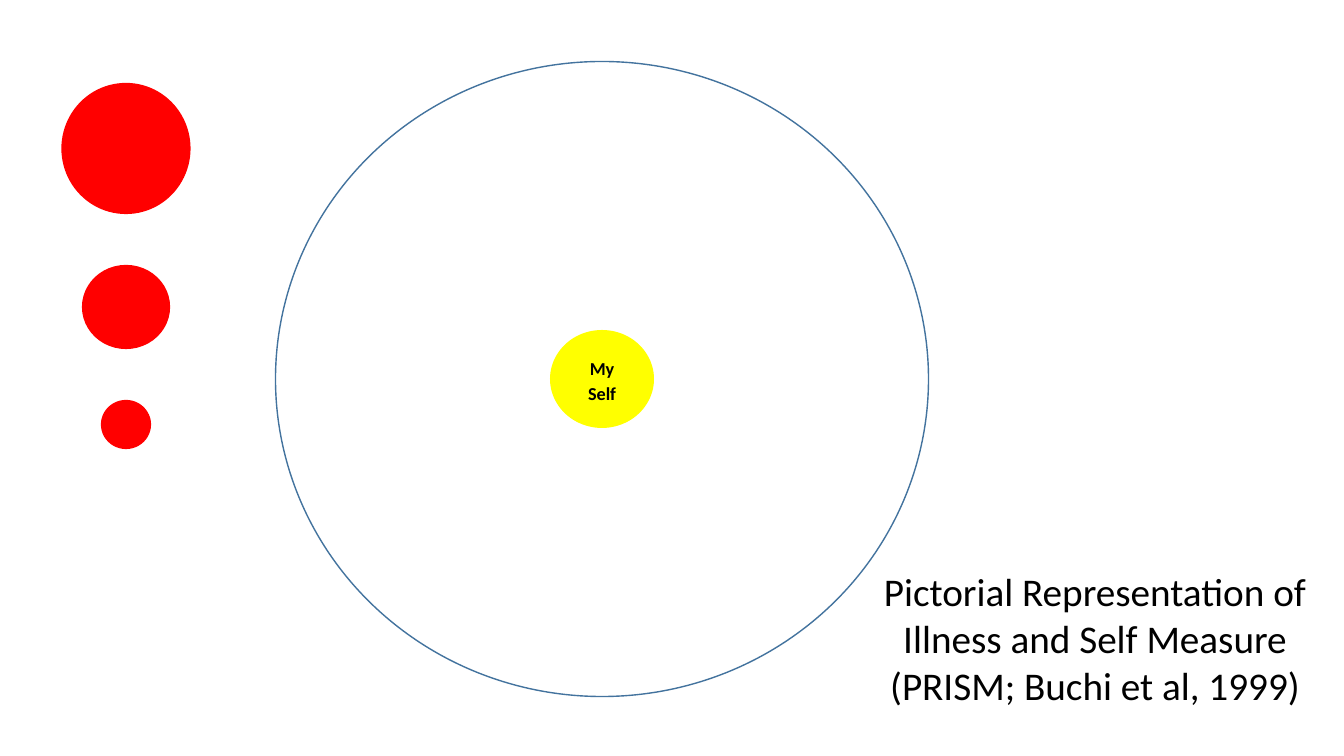
"""Build the PRISM slide: a life circle with the self at its centre, illness discs and a caption."""
from dataclasses import dataclass

from pptx import Presentation
from pptx.dml.color import RGBColor
from pptx.enum.shapes import MSO_SHAPE as Preset
from pptx.enum.text import MSO_ANCHOR as Anchor, MSO_AUTO_SIZE as AutoSize, PP_ALIGN as Align
from pptx.util import Pt

CAPTION = "Pictorial Representation of Illness and Self Measure (PRISM; Buchi et al, 1999)"
CAPTION_BOX = (869, 562, 452, 194)
SELF_LABEL = "My Self"
LIFE_CENTRE = (602, 379)
LIFE_SIZE = (653, 635)
SELF_SIZE = (104, 98)
ILLNESS_SIZES = [(125, 127), (84, 80), (46, 45)]
ILLNESS_CENTRE_X, ILLNESS_TOP, ILLNESS_GAP = 126, 85, 55
SLIDE_SIZE = (1344, 756)
EMU_PER_PX = 914400 / 100.8


@dataclass(frozen=True)
class Theme:
    """Colours, font and point sizes of the slide."""
    text: str = "000000"
    life: str = "43739E"
    illness: str = "FF0000"
    self_disc: str = "FFFF00"
    font: str = "Calibri"
    caption_size: int = 28
    label_size: int = 13
    life_line: int = 1
    illness_line: int = 3


THEME = Theme()


def px(*lengths):
    """Turn pixel lengths into EMU."""
    return [round(length * EMU_PER_PX) for length in lengths]


def add_disc(slide, centre, size, fill=None, line=None, line_width=0):
    """Add an ellipse around a centre point."""
    (x, y), (width, height) = centre, size
    disc = slide.shapes.add_shape(
        Preset.OVAL, *px(x - width / 2, y - height / 2, width, height))
    disc.shadow.inherit = False
    if fill:
        disc.fill.solid()
        disc.fill.fore_color.rgb = RGBColor.from_string(fill)
    else:
        disc.fill.background()
    if line:
        disc.line.color.rgb = RGBColor.from_string(line)
        disc.line.width = Pt(line_width)
    else:
        disc.line.fill.background()
    return disc


def write_centred(shape, text, size, bold=False):
    """Write one centred, wrapping paragraph and return it."""
    shape.text_frame.word_wrap = True
    paragraph = shape.text_frame.paragraphs[0]
    paragraph.alignment = Align.CENTER
    run = paragraph.add_run()
    run.text = text
    run.font.name = THEME.font
    run.font.size = Pt(size)
    run.font.bold = bold
    run.font.color.rgb = RGBColor.from_string(THEME.text)
    return paragraph


def main():
    """Draw the slide and save it."""
    presentation = Presentation()
    presentation.slide_width, presentation.slide_height = px(*SLIDE_SIZE)
    slide = presentation.slides.add_slide(presentation.slide_layouts.get_by_name("Blank"))

    caption = slide.shapes.add_textbox(*px(*CAPTION_BOX))
    write_centred(caption, CAPTION, THEME.caption_size)
    caption.text_frame.auto_size = AutoSize.SHAPE_TO_FIT_TEXT

    add_disc(slide, LIFE_CENTRE, LIFE_SIZE, line=THEME.life, line_width=THEME.life_line)

    top = ILLNESS_TOP
    for width, height in ILLNESS_SIZES:
        add_disc(slide, (ILLNESS_CENTRE_X, top + height / 2), (width, height),
                 THEME.illness, THEME.illness, THEME.illness_line)
        top += height + ILLNESS_GAP

    self_disc = add_disc(slide, LIFE_CENTRE, SELF_SIZE, THEME.self_disc)
    self_disc.text_frame.vertical_anchor = Anchor.MIDDLE
    label = write_centred(self_disc, SELF_LABEL, THEME.label_size, bold=True)
    label.line_spacing = 1.15
    label.space_after = Pt(10)

    presentation.save("out.pptx")


if __name__ == "__main__":
    main()
